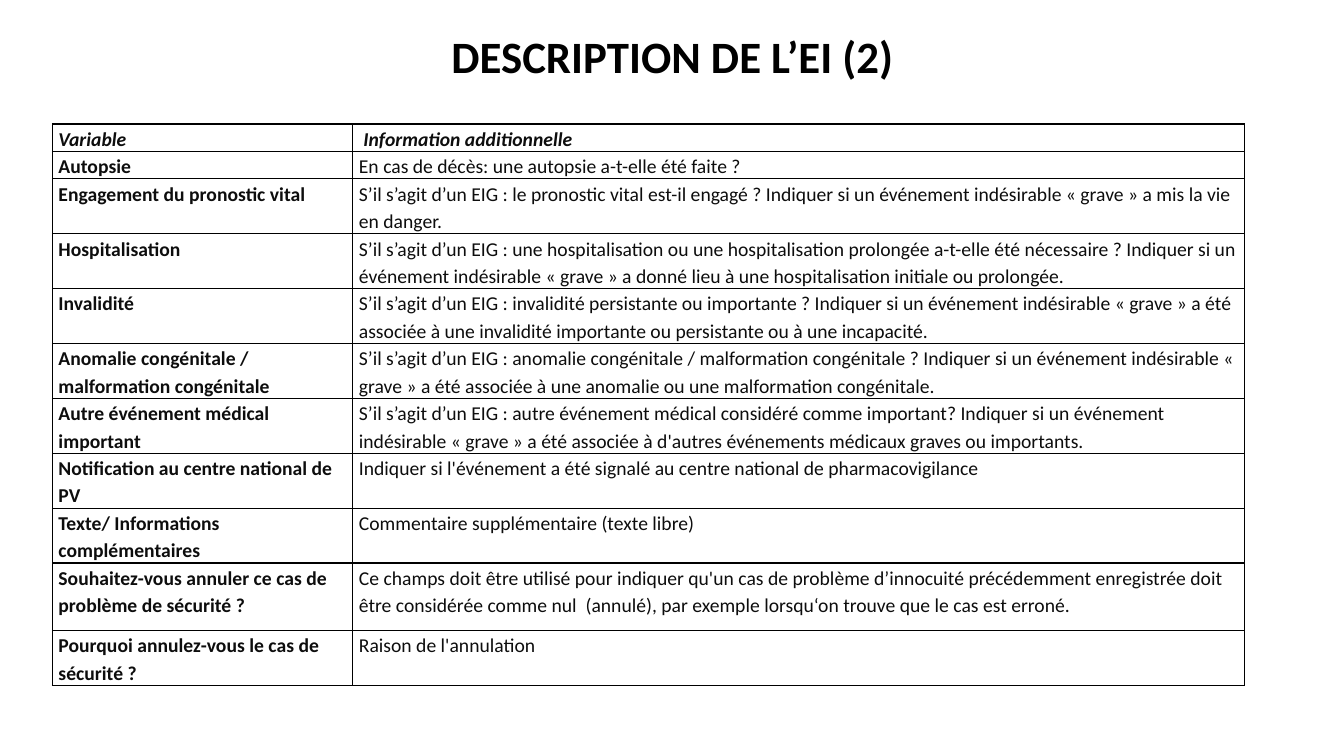
from lxml import etree
from pptx import Presentation
from pptx.dml.color import RGBColor
from pptx.enum import text
from pptx.oxml import ns
from pptx.util import Inches, Pt

BLACK = RGBColor(0x00, 0x00, 0x00)
INK = RGBColor(0x0D, 0x0D, 0x0D)

ROWS = [
    ("Variable", " Information additionnelle"),
    ("Autopsie", "En cas de décès: une autopsie a-t-elle été faite ?"),
    ("Engagement du pronostic vital",
     "S’il s’agit d’un EIG : le pronostic vital est-il engagé ? Indiquer si un "
     "événement indésirable « grave » a mis la vie en danger."),
    ("Hospitalisation",
     "S’il s’agit d’un EIG : une hospitalisation ou une hospitalisation prolongée "
     "a-t-elle été nécessaire ? Indiquer si un événement indésirable « grave » a "
     "donné lieu à une hospitalisation initiale ou prolongée."),
    ("Invalidité",
     "S’il s’agit d’un EIG : invalidité persistante ou importante ? Indiquer si un "
     "événement indésirable « grave » a été associée à une invalidité importante "
     "ou persistante ou à une incapacité."),
    ("Anomalie congénitale / malformation congénitale",
     "S’il s’agit d’un EIG : anomalie congénitale / malformation congénitale ? "
     "Indiquer si un événement indésirable « grave » a été associée à une anomalie "
     "ou une malformation congénitale."),
    ("Autre événement médical important",
     "S’il s’agit d’un EIG : autre événement médical considéré comme important? "
     "Indiquer si un événement indésirable « grave » a été associée à d'autres "
     "événements médicaux graves ou importants."),
    ("Notification au centre national de PV",
     "Indiquer si l'événement a été signalé au centre national de pharmacovigilance"),
    ("Texte/ Informations complémentaires",
     "Commentaire supplémentaire (texte libre)"),
    ("Souhaitez-vous annuler ce cas de problème de sécurité ?",
     "Ce champs doit être utilisé pour indiquer qu'un cas de problème d’innocuité "
     "précédemment enregistrée doit être considérée comme nul  (annulé), par "
     "exemple lorsqu‘on trouve que le cas est erroné."),
    ("Pourquoi annulez-vous le cas de sécurité ?", "Raison de l'annulation"),
]
HEIGHTS = [0.27] * 2 + [0.54] * 7 + [0.67, 0.54]
WIDTHS = [2.98, 8.84]


def style(font, color, **format):
    font.name = "Calibri"
    font.color.rgb = color
    for name, value in format.items():
        setattr(font, name, value)


def border(cell):
    """Draw a thin black line on all four sides of the cell."""
    props = cell._tc.get_or_add_tcPr()
    for i, side in enumerate(("lnL", "lnR", "lnT", "lnB")):
        line = etree.Element(ns.qn("a:" + side), w=str(Pt(1)))
        fill = etree.SubElement(line, ns.qn("a:solidFill"))
        etree.SubElement(fill, ns.qn("a:srgbClr"), val=str(BLACK))
        props.insert(i, line)


deck = Presentation()
deck.slide_width = Inches(13.33)
deck.slide_height = Inches(7.5)
slide = deck.slides.add_slide(deck.slide_layouts[6])

frame = slide.shapes.add_table(
    len(ROWS), len(WIDTHS), Inches(0.52), Inches(1.23),
    Inches(sum(WIDTHS)), Inches(sum(HEIGHTS)))
table = frame.table
table.first_row = table.horz_banding = False
for column, width in zip(table.columns, WIDTHS):
    column.width = Inches(width)

for r, (row, height) in enumerate(zip(ROWS, HEIGHTS)):
    table.rows[r].height = Inches(height)
    head = r == 0
    for c, words in enumerate(row):
        cell = table.cell(r, c)
        cell.margin_left = cell.margin_right = Inches(0.06)
        cell.margin_top = cell.margin_bottom = 0
        cell.vertical_anchor = text.MSO_ANCHOR.MIDDLE if head else text.MSO_ANCHOR.TOP
        cell.fill.background()
        border(cell)
        cell.text = words
        para = cell.text_frame.paragraphs[0]
        para.line_spacing = 1.15
        style(para.runs[0].font, INK, size=Pt(14), bold=head or c == 0, italic=head)

title = slide.shapes.add_textbox(
    Inches(2.17), Inches(0.21), Inches(9), Inches(0.69)).text_frame
title.word_wrap = True
title.vertical_anchor = text.MSO_ANCHOR.MIDDLE
title.text = "DESCRIPTION DE L’EI (2)"
para = title.paragraphs[0]
para.alignment = text.PP_ALIGN.CENTER
style(para.runs[0].font, BLACK, size=Pt(32), bold=True)

deck.save("out.pptx")
